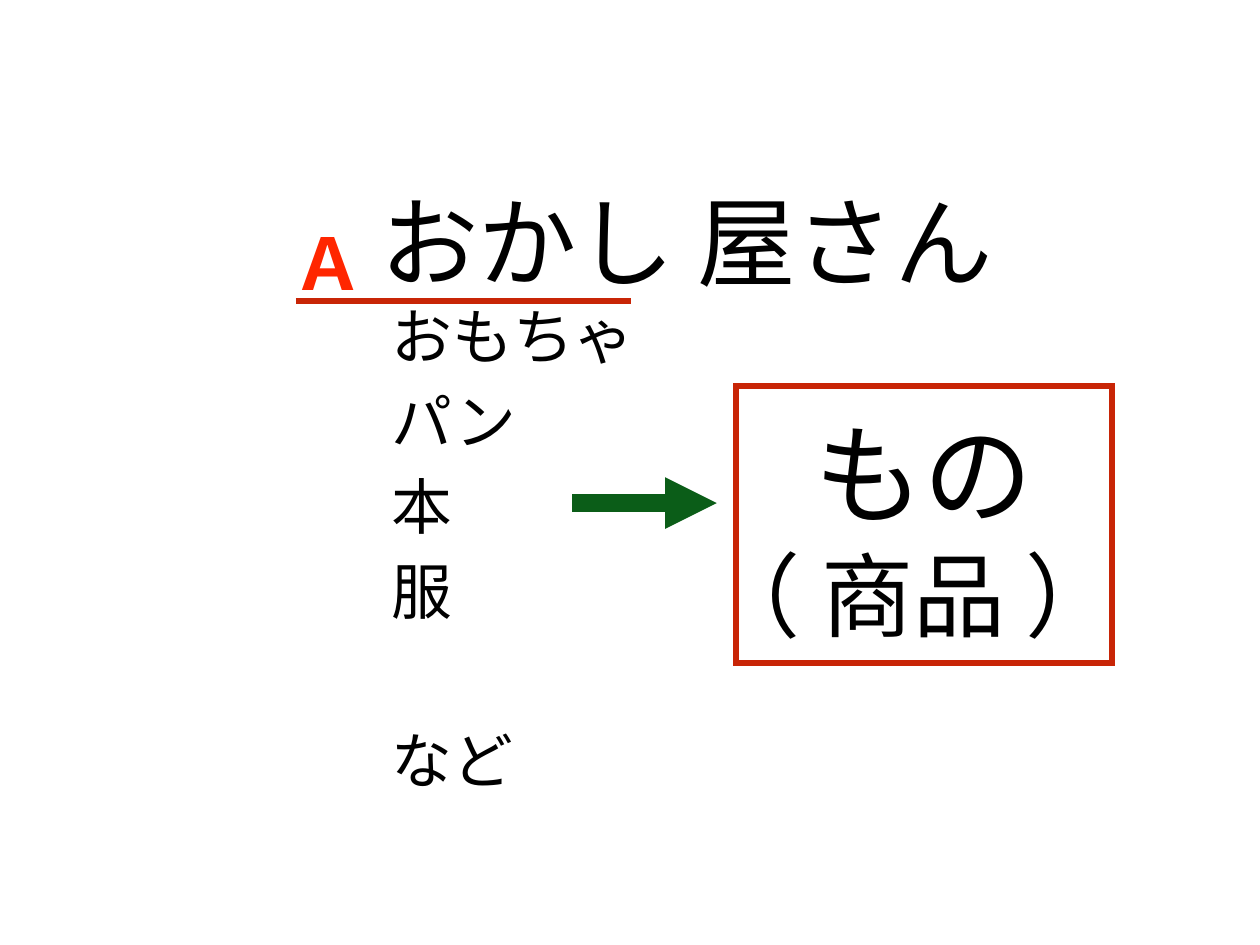
from dataclasses import dataclass

from pptx import Presentation
from pptx.dml.color import RGBColor
from pptx.enum.shapes import MSO_CONNECTOR, MSO_SHAPE
from pptx.enum.text import MSO_ANCHOR, PP_ALIGN
from pptx.oxml.ns import qn
from pptx.util import Inches, Pt
from lxml.etree import SubElement


@dataclass(frozen=True)
class Theme:
    ink: str = "000000"
    label: str = "FF2600"
    frame: str = "C82506"
    arrow: str = "0B5D18"
    japanese: str = "Noto Sans CJK JP"
    latin: str = "Arial"
    title_size: float = 80
    label_size: float = 58
    list_size: float = 49.4
    thing_size: float = 88.9
    goods_size: float = 74.8
    list_pitch: float = 68
    thin: float = 5
    thick: float = 14


THEME = Theme()


def inches(*values):
    return [Inches(v) for v in values]


def add_text(slide, box, lines, size, font=THEME.japanese, color=THEME.ink,
             bold=False, spacing=1.15):
    tf = slide.shapes.add_textbox(*inches(*box)).text_frame
    tf.word_wrap = False
    tf.vertical_anchor = MSO_ANCHOR.MIDDLE
    tf.margin_left = tf.margin_right = Inches(0.06)
    tf.margin_top = tf.margin_bottom = Inches(0.06)
    tf.text = "\n".join(lines)
    for p in tf.paragraphs:
        p.alignment = PP_ALIGN.LEFT
        p.line_spacing = spacing
        p.space_before = Pt(1)
        for r in p.runs:
            r.font.name = font
            r.font.size = Pt(size)
            r.font.bold = bold
            r.font.color.rgb = RGBColor.from_string(color)
            SubElement(r.font._element, qn("a:ea"), typeface=font)
    return tf


def style_line(line, color, width):
    line.color.rgb = RGBColor.from_string(color)
    line.width = Pt(width)


def add_line(slide, start, end, color, width, arrow=False):
    cx = slide.shapes.add_connector(
        MSO_CONNECTOR.STRAIGHT, *inches(*start, *end))
    style_line(cx.line, color, width)
    sp_pr = cx._element.spPr
    if arrow:
        SubElement(sp_pr.find(qn("a:ln")), qn("a:tailEnd"), type="triangle")
    SubElement(sp_pr, qn("a:effectLst"))


def add_frame(slide, box):
    sp = slide.shapes.add_shape(MSO_SHAPE.RECTANGLE, *inches(*box))
    sp.shadow.inherit = False
    sp.fill.background()
    style_line(sp.line, THEME.frame, THEME.thin)
    SubElement(sp._element.spPr.find(qn("a:ln")), qn("a:miter"), lim="800000")


def add_shop_list(slide):
    tf = add_text(slide, (4.36, 2.94, 2.87, 6.36),
                  ["おもちゃ", "パン", "本", "服", "など"],
                  THEME.list_size, spacing=Pt(THEME.list_pitch))
    tf.paragraphs[-1].space_before = Pt(THEME.list_pitch + 2)


def main():
    prs = Presentation()
    prs.slide_width, prs.slide_height = inches(14.22, 10.67)
    slide = prs.slides.add_slide(prs.slide_layouts[6])

    add_text(slide, (4.23, 1.89, 7.1, 1.44), ["おかし 屋さん"], THEME.title_size)
    add_text(slide, (3.24, 2.42, 0.93, 0.92), ["Ａ"], THEME.label_size,
             THEME.latin, THEME.label, bold=True)
    add_line(slide, (3.34, 3.4), (7.12, 3.4), THEME.frame, THEME.thin)
    add_shop_list(slide)
    add_text(slide, (9.13, 4.54, 2.6, 1.34), ["もの"], THEME.thing_size)
    add_text(slide, (7.94, 6.04, 4.97, 1.15), ["（ 商品 ）"], THEME.goods_size)
    add_line(slide, (6.46, 5.68), (8.09, 5.68), THEME.arrow, THEME.thick,
             arrow=True)
    add_frame(slide, (8.31, 4.36, 4.24, 3.13))

    prs.save("out.pptx")


if __name__ == "__main__":
    main()
